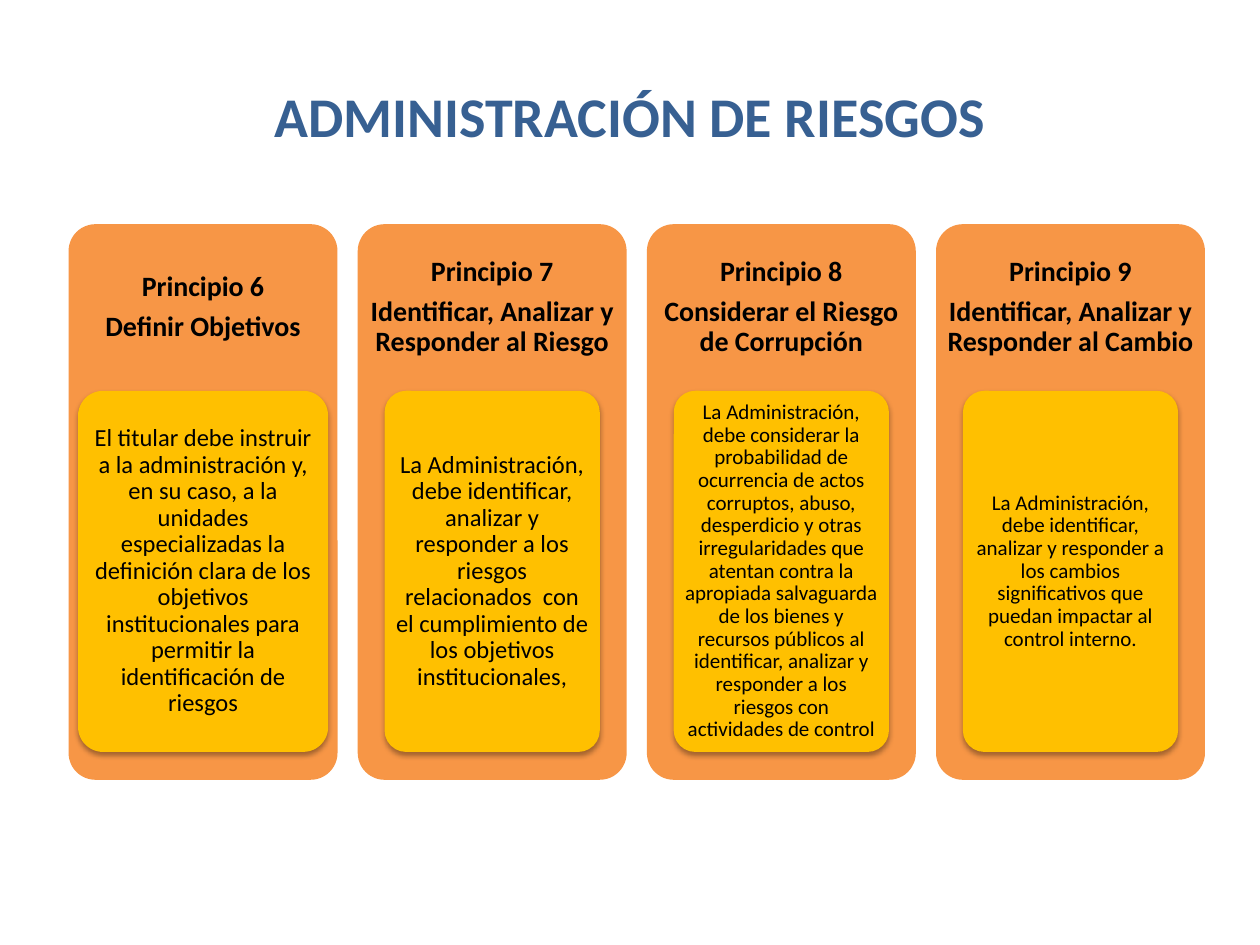
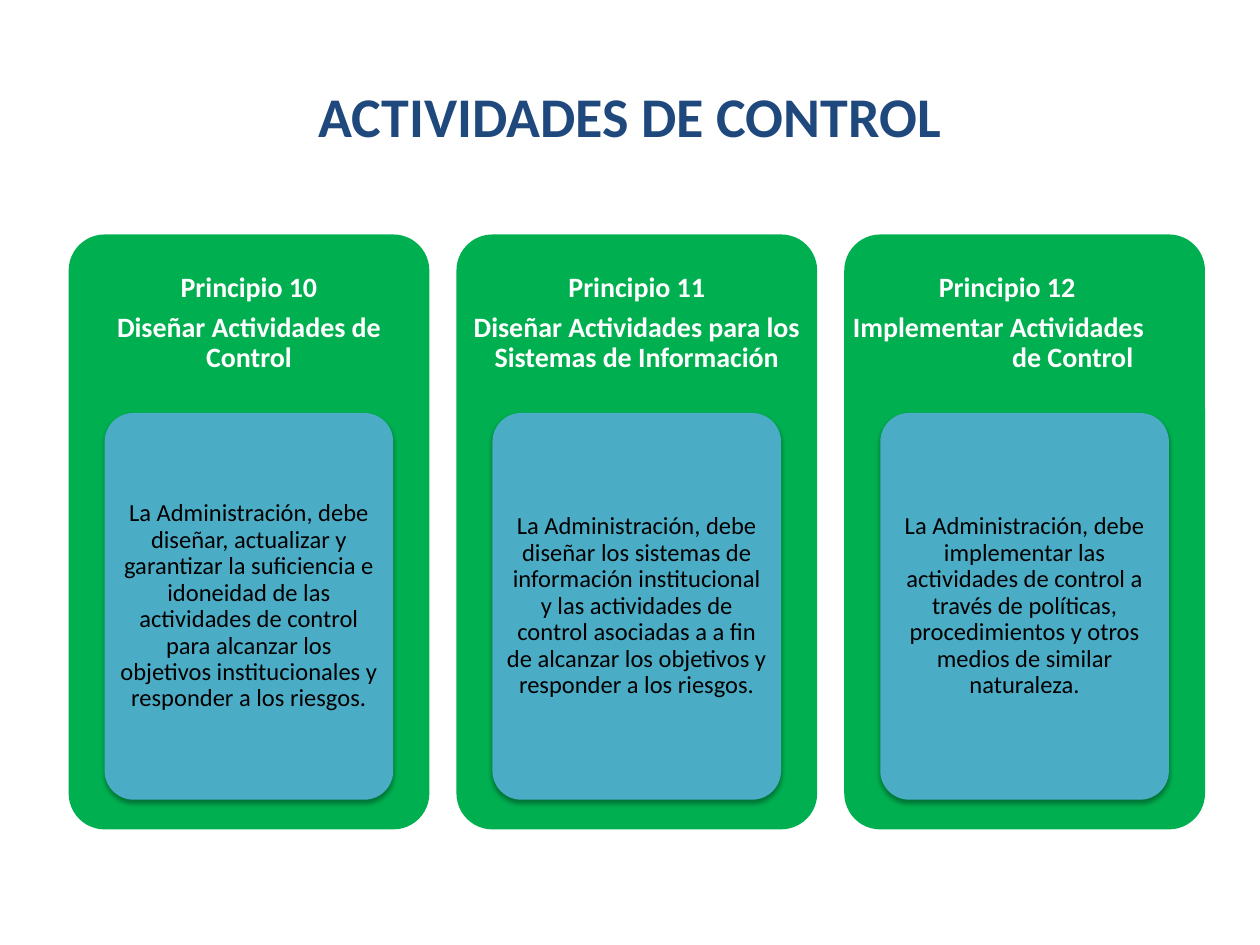
from pptx import Presentation
from pptx.dml.color import RGBColor
from pptx.enum.shapes import MSO_SHAPE
from pptx.enum.text import MSO_ANCHOR, PP_ALIGN
from pptx.oxml import parse_xml
from pptx.oxml.ns import nsdecls
from pptx.util import Pt

ROUNDED = MSO_SHAPE.ROUNDED_RECTANGLE
MIDDLE, TOP = MSO_ANCHOR.MIDDLE, MSO_ANCHOR.TOP
CENTER, LEFT = PP_ALIGN.CENTER, PP_ALIGN.LEFT

COLORS = {
    "orange": "F79646",
    "amber": "FFC000",
    "green": "00B050",
    "teal": "4BACC6",
    "steel": "376092",
    "navy": "1F497D",
    "black": "000000",
    "white": "FFFFFF",
}
FONT = "Calibri"
SLIDE_WIDTH, SLIDE_HEIGHT = 720, 540

# The row of cards; shares are relative to one card.
ROW_LEFT, ROW_WIDTH = 39.2, 649.4
GAP_SHARE = 0.075
HEADER_SHARE = 0.3
PANEL_SHARE = 0.65
PANEL_WIDTH_SHARE = 0.8
HEADER_INSET = 5

# Each card: heading lines, body text, body size, other settings.
RISK_CARDS = [
    (["Principio 6", "Definir Objetivos"],
     "El titular debe instruir a la administración y, en su caso, a la "
     "unidades especializadas la definición clara de los objetivos "
     "institucionales para permitir la identificación de riesgos",
     14, {"width_share": 0.93}),
    (["Principio 7", "Identificar, Analizar y Responder al Riesgo"],
     "La Administración, debe identificar, analizar y responder a los riesgos "
     "relacionados  con el cumplimiento de los objetivos institucionales,",
     14, {}),
    (["Principio 8", "Considerar el Riesgo de Corrupción"],
     "La Administración, debe considerar la probabilidad de ocurrencia de "
     "actos corruptos, abuso, desperdicio y otras irregularidades que atentan "
     "contra la apropiada salvaguarda de los bienes y recursos públicos al "
     "identificar, analizar y responder a los riesgos con actividades de "
     "control",
     12, {}),
    (["Principio 9", "Identificar, Analizar y Responder al Cambio"],
     "La Administración, debe identificar, analizar y responder a los cambios "
     "significativos que puedan impactar al control interno.",
     12, {}),
]
CONTROL_CARDS = [
    (["Principio 10", "Diseñar Actividades de Control"],
     "La Administración, debe diseñar, actualizar y garantizar la suficiencia "
     "e idoneidad de las actividades de control para alcanzar los objetivos "
     "institucionales y responder a los riesgos.",
     14, {}),
    (["Principio 11", "Diseñar Actividades para los Sistemas de Información"],
     "La Administración, debe diseñar los sistemas de información "
     "institucional y las actividades de control asociadas a a fin de "
     "alcanzar los objetivos y responder a los riesgos.",
     14, {}),
    (["Principio 12", "Implementar Actividades de Control"],
     "La Administración, debe implementar las actividades de control a través "
     "de políticas, procedimientos y otros medios de similar naturaleza.",
     14, {"hanging": 91}),
]


def rgb(name):
    return RGBColor.from_string(COLORS[name])


def apply_format(target, values):
    for name, value in values.items():
        setattr(target, name, value)


def write_text(box, lines, size, color, bold=False, inset=(7.2, 3.6),
               anchor=MIDDLE, line_spacing=0.9):
    """Fill the box with one centred paragraph per line."""
    across, down = map(Pt, inset)
    frame = box.text_frame
    apply_format(frame, {
        "word_wrap": True, "vertical_anchor": anchor,
        "margin_left": across, "margin_right": across,
        "margin_top": down, "margin_bottom": down,
    })
    for index, line in enumerate(lines):
        para = frame.add_paragraph() if index else frame.paragraphs[0]
        apply_format(para, {"alignment": CENTER, "line_spacing": line_spacing})
        if index:
            para.space_before = Pt(0.35 * size)
        span = para.add_run()
        span.text = line
        apply_format(span.font, {"name": FONT, "size": Pt(size), "bold": bold})
        span.font.color.rgb = rgb(color)


def add_text(page, frame, lines, size, color, **options):
    box = page.shapes.add_textbox(*map(Pt, frame))
    write_text(box, lines, size, color, **options)
    return box


def add_title(page, text, color):
    add_text(page, (0, 43.2, SLIDE_WIDTH, 46), [text], 32, color,
             bold=True, anchor=TOP, line_spacing=1.0)


def add_rounded(page, frame, color):
    shape = page.shapes.add_shape(ROUNDED, *map(Pt, frame))
    shape.adjustments[0] = 0.1
    shape.shadow.inherit = False
    shape.fill.solid()
    shape.fill.fore_color.rgb = rgb(color)
    shape.line.fill.background()
    return shape


def add_soft_shadow(shape):
    effects = shape._element.spPr.find(
        "{http://schemas.openxmlformats.org/drawingml/2006/main}effectLst")
    effects.append(parse_xml(
        f'<a:outerShdw {nsdecls("a")} blurRad="{Pt(3.1)}" dist="{Pt(1.8)}" '
        f'dir="5400000" rotWithShape="0"><a:srgbClr val="{COLORS["black"]}">'
        '<a:alpha val="35000"/></a:srgbClr></a:outerShdw>'))


def hang_last_line(box, indent):
    """Start the last heading at the left edge and indent its wrapped line."""
    para = box.text_frame.paragraphs[-1]
    para.alignment = LEFT
    properties = para._p.get_or_add_pPr()
    properties.set("marL", str(Pt(indent)))
    properties.set("indent", str(-Pt(indent)))
    box.text_frame.margin_right = Pt(HEADER_INSET + 20)


def add_card(page, frame, card, colors):
    left, top, width, height = frame
    card_color, panel_color, heading_color = colors
    heading, body, size, settings = card
    add_rounded(page, frame, card_color)

    header_height = height * HEADER_SHARE
    header = add_text(page, (left, top, width, header_height), heading, 16,
                      heading_color, bold=True,
                      inset=(HEADER_INSET, HEADER_INSET))
    if "hanging" in settings:
        hang_last_line(header, settings["hanging"])

    panel_width = width * settings.get("width_share", PANEL_WIDTH_SHARE)
    panel = add_rounded(page, (left + (width - panel_width) / 2,
                               top + header_height, panel_width,
                               height * PANEL_SHARE), panel_color)
    add_soft_shadow(panel)
    write_text(panel, [body], size, "black", inset=(0.2 * size, 0.15 * size))


def add_card_row(page, cards, top, height, colors):
    count = len(cards)
    width = ROW_WIDTH / (count + GAP_SHARE * (count - 1))
    for index, card in enumerate(cards):
        left = ROW_LEFT + index * width * (1 + GAP_SHARE)
        add_card(page, (left, top, width, height), card, colors)


def main():
    deck = Presentation()
    deck.slide_width, deck.slide_height = Pt(SLIDE_WIDTH), Pt(SLIDE_HEIGHT)
    blank = deck.slide_layouts[6]

    risks = deck.slides.add_slide(blank)
    add_card_row(risks, RISK_CARDS, 128.1, 317.5, ("orange", "amber", "black"))
    add_title(risks, "ADMINISTRACIÓN DE RIESGOS", "steel")

    controls = deck.slides.add_slide(blank)
    add_card_row(controls, CONTROL_CARDS, 134, 340, ("green", "teal", "white"))
    add_title(controls, "ACTIVIDADES DE CONTROL", "navy")

    deck.save("out.pptx")


if __name__ == "__main__":
    main()
